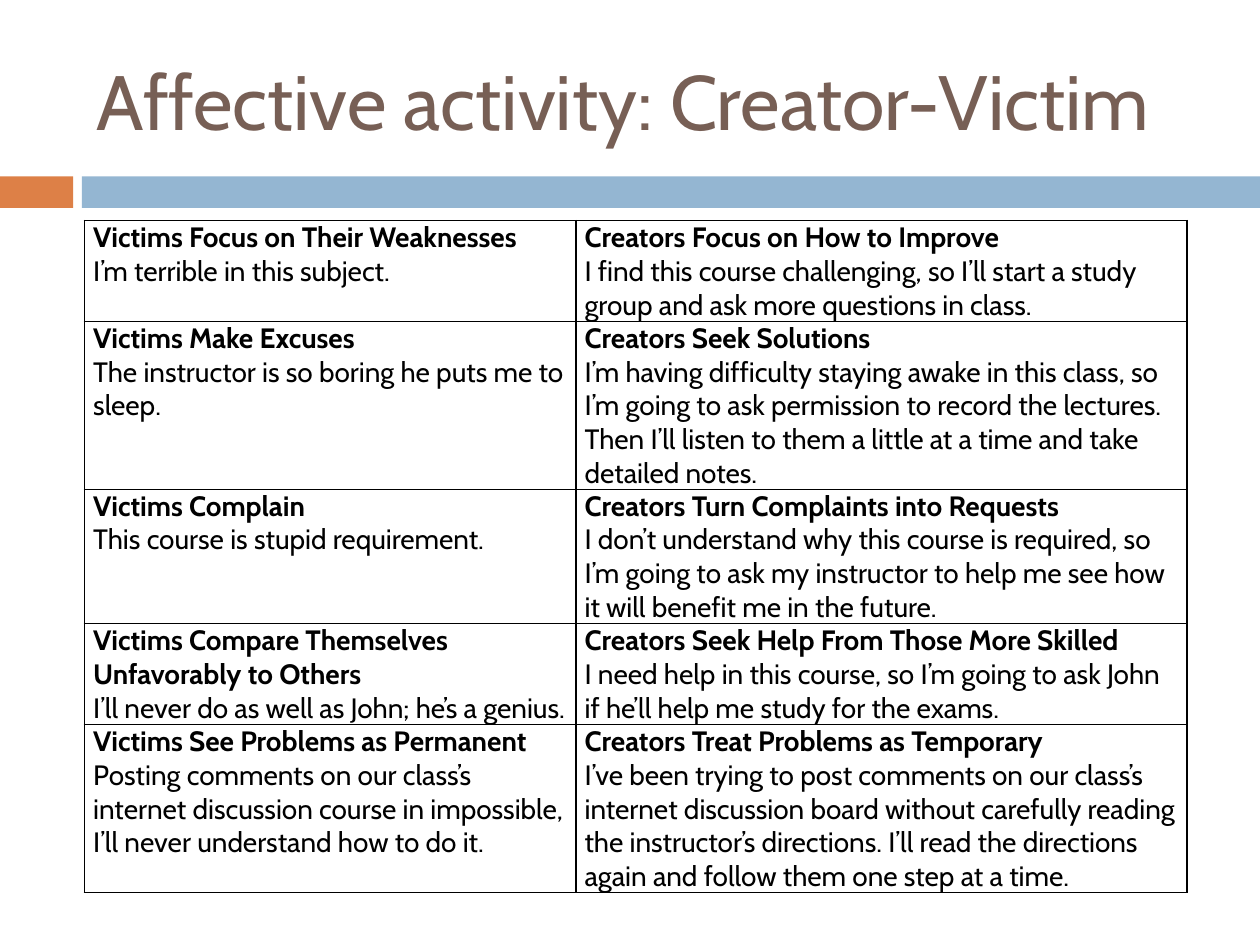
from lxml import etree
from pptx import Presentation
from pptx.dml.color import RGBColor
from pptx.enum import shapes, text
from pptx.oxml import ns
from pptx.util import Inches, Pt

COLORS = {
    "orange": "DD8047",
    "blue": "94B6D2",
    "brown": "775F55",
    "black": "000000",
}

ROWS = [
    (0.76,
     ("Victims Focus on Their Weaknesses",
      "I’m terrible in this subject."),
     ("Creators Focus on How to Improve",
      "I find this course challenging, so I’ll start a study group and ask more "
      "questions in class.")),
    (1.27,
     ("Victims Make Excuses",
      "The instructor is so boring he puts me to sleep."),
     ("Creators Seek Solutions",
      "I’m having difficulty staying awake in this class, so I’m going to ask "
      "permission to record the lectures. Then I’ll listen to them a little at a "
      "time and take detailed notes.")),
    (1.02,
     ("Victims Complain",
      "This course is stupid requirement."),
     ("Creators Turn Complaints into Requests",
      "I don’t understand why this course is required, so I’m going to ask my "
      "instructor to help me see how it will benefit me in the future.")),
    (0.76,
     ("Victims Compare Themselves Unfavorably to Others",
      "I’ll never do as well as John; he’s a genius."),
     ("Creators Seek Help From Those More Skilled",
      "I need help in this course, so I’m going to ask John if he’ll help me "
      "study for the exams.")),
    (1.27,
     ("Victims See Problems as Permanent",
      "Posting comments on our class’s internet discussion course in impossible, "
      "I’ll never understand how to do it."),
     ("Creators Treat Problems as Temporary",
      "I’ve been trying to post comments on our class’s internet discussion board "
      "without carefully reading the instructor’s directions. I’ll read the "
      "directions again and follow them one step at a time.")),
]


class SlideBuilder:
    font = "Cabin"
    title_size = 44
    body_size = 16
    border_width = 1

    def __init__(self, slide):
        self.slide = slide

    def color(self, name):
        return RGBColor.from_string(COLORS[name])

    def format_runs(self, p, size, color, bold=False):
        for r in p.runs:
            r.font.name = self.font
            r.font.size = Pt(size)
            r.font.bold = bold
            r.font.color.rgb = self.color(color)

    def bar(self, x, y, w, h, color):
        sp = self.slide.shapes.add_shape(
            shapes.MSO_SHAPE.RECTANGLE, Inches(x), Inches(y), Inches(w), Inches(h))
        sp.shadow.inherit = False
        sp.fill.solid()
        sp.fill.fore_color.rgb = self.color(color)
        sp.line.fill.background()

    def title(self, x, y, w, h, content):
        sp = self.slide.shapes.add_textbox(Inches(x), Inches(y), Inches(w), Inches(h))
        tf = sp.text_frame
        tf.word_wrap = True
        tf.vertical_anchor = text.MSO_ANCHOR.MIDDLE
        tf.text = content
        self.format_runs(tf.paragraphs[0], self.title_size, "brown")

    def borders(self, cell):
        tc_pr = cell._tc.get_or_add_tcPr()
        for i, side in enumerate(("lnL", "lnR", "lnT", "lnB")):
            ln = etree.Element(ns.qn(f"a:{side}"), w=str(Pt(self.border_width)))
            fill = etree.SubElement(ln, ns.qn("a:solidFill"))
            etree.SubElement(fill, ns.qn("a:srgbClr"), val=COLORS["black"])
            tc_pr.insert(i, ln)

    def cell(self, cell, heading, quote):
        cell.fill.background()
        cell.margin_left = cell.margin_right = Inches(0.07)
        cell.margin_top = cell.margin_bottom = 0
        tf = cell.text_frame
        tf.text = f"{heading}\n{quote}"
        for p, bold in zip(tf.paragraphs, (True, False)):
            self.format_runs(p, self.body_size, "black", bold)
        self.borders(cell)

    def table(self, x, y, widths, rows):
        height = sum(row[0] for row in rows)
        tbl = self.slide.shapes.add_table(
            len(rows), len(widths), Inches(x), Inches(y),
            Inches(sum(widths)), Inches(height)).table
        tbl.first_row = tbl.horz_banding = False
        for col, width in zip(tbl.columns, widths):
            col.width = Inches(width)
        for row, (row_height, *entries) in zip(tbl.rows, rows):
            row.height = Inches(row_height)
            for cell, entry in zip(row.cells, entries):
                self.cell(cell, *entry)


def main():
    prs = Presentation()
    prs.slide_width, prs.slide_height = Inches(10), Inches(7.5)
    s = SlideBuilder(prs.slides.add_slide(prs.slide_layouts[6]))
    s.bar(0, 1.4, 0.58, 0.25, "orange")
    s.bar(0.65, 1.4, 9.35, 0.25, "blue")
    s.title(0.67, 0.25, 8.92, 1.08, "Affective activity: Creator-Victim")
    s.table(0.67, 1.75, (3.9, 4.85), ROWS)
    prs.save("out.pptx")


if __name__ == "__main__":
    main()
